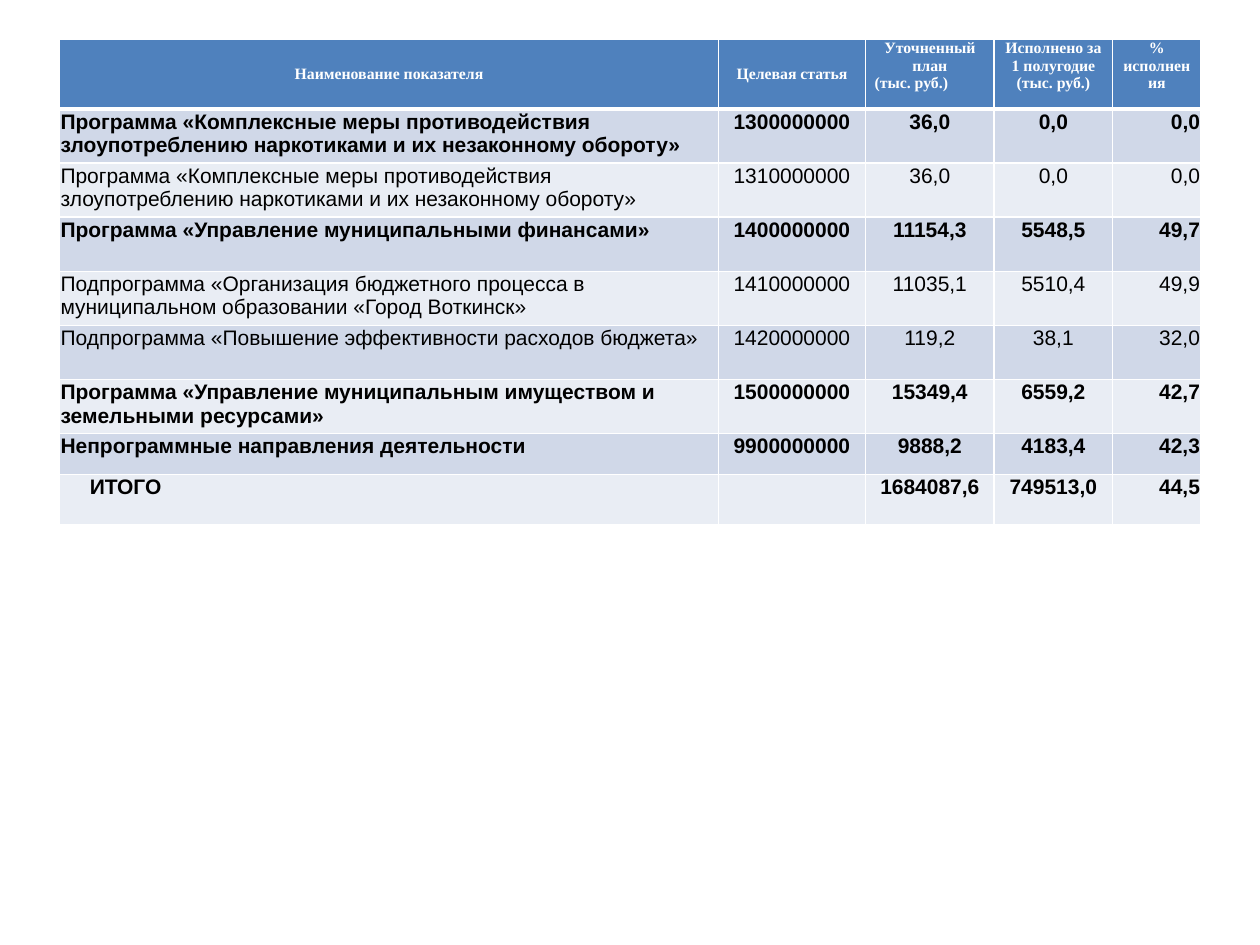
"""Builds a slide with a table of budget programme execution."""
import pptx
import pptx.dml.color
import pptx.enum.text
import pptx.oxml
import pptx.oxml.ns
import pptx.util
from pptx.util import Cm

ALIGN = pptx.enum.text.PP_ALIGN
ANCHOR = pptx.enum.text.MSO_ANCHOR

COLUMN_WIDTHS = [13.28, 2.97, 2.59, 2.39, 1.78]
ROW_HEIGHTS = [1.4] + [1.09] * 6 + [0.83, 1.0]
COLUMN_ALIGNS = [ALIGN.LEFT, ALIGN.CENTER, ALIGN.CENTER, ALIGN.CENTER, ALIGN.RIGHT]
HEADERS = [
    ["Наименование показателя"],
    ["Целевая статья"],
    ["Уточненный план", "(тыс. руб.)"],
    ["Исполнено за 1 полугодие", "(тыс. руб.)"],
    ["% исполнения"],
]
DRUGS = "Программа «Комплексные меры противодействия злоупотреблению наркотиками и их незаконному обороту»"
PROGRAMMES = [
    (True, DRUGS, "1300000000", "36,0", "0,0", "0,0"),
    (False, DRUGS, "1310000000", "36,0", "0,0", "0,0"),
    (True, "Программа «Управление муниципальными финансами»",
     "1400000000", "11154,3", "5548,5", "49,7"),
    (False, "Подпрограмма «Организация бюджетного процесса в муниципальном образовании «Город Воткинск»",
     "1410000000", "11035,1", "5510,4", "49,9"),
    (False, "Подпрограмма «Повышение эффективности расходов бюджета»",
     "1420000000", "119,2", "38,1", "32,0"),
    (True, "Программа «Управление муниципальным имуществом и земельными ресурсами»",
     "1500000000", "15349,4", "6559,2", "42,7"),
    (True, "Непрограммные направления деятельности",
     "9900000000", "9888,2", "4183,4", "42,3"),
    (True, "ИТОГО", "", "1684087,6", "749513,0", "44,5"),
]


def color(value):
    return pptx.dml.color.RGBColor.from_string(value)


class SlideBuilder:
    header_fill = "4F81BD"
    band_fills = ["D0D8E8", "E9EDF4"]
    white = "FFFFFF"
    black = "000000"

    def __init__(self, slide):
        self.slide = slide

    def table(self, left, top, widths, heights):
        frame = self.slide.shapes.add_table(
            len(heights), len(widths), Cm(left), Cm(top), Cm(sum(widths)), Cm(sum(heights)))
        table = frame.table
        table.first_row = table.horz_banding = False
        for column, width in zip(table.columns, widths):
            column.width = Cm(width)
        for row, height in zip(table.rows, heights):
            row.height = Cm(height)
        return table

    def cell(self, cell, fill, margins, top_line=1, bottom_line=1):
        cell.margin_left, cell.margin_top, cell.margin_right, cell.margin_bottom = map(Cm, margins)
        cell.fill.solid()
        cell.fill.fore_color.rgb = color(fill)
        self.borders(cell, {"lnL": 1, "lnR": 1, "lnT": top_line, "lnB": bottom_line})

    def borders(self, cell, lines):
        properties = cell._tc.get_or_add_tcPr()
        for index, (tag, width) in enumerate(lines.items()):
            properties.insert(index, pptx.oxml.parse_xml(
                f'<a:{tag} {pptx.oxml.ns.nsdecls("a")} w="{pptx.util.Pt(width)}">'
                f'<a:solidFill><a:srgbClr val="{self.white}"/></a:solidFill></a:{tag}>'))

    def text(self, para, text, font, size, ink, bold, align):
        para.alignment = align
        if not text:
            para.font.size = pptx.util.Pt(size)
            return
        span = para.add_run()
        span.text = text
        span.font.name = font
        span.font.size = pptx.util.Pt(size)
        span.font.bold = bold
        span.font.color.rgb = color(ink)

    def header(self, cell, lines, anchor, aligns):
        self.cell(cell, self.header_fill, (0.18, 0, 0.18, 0), bottom_line=3)
        cell.vertical_anchor = anchor
        box = cell.text_frame
        for index, (line, align) in enumerate(zip(lines, aligns)):
            para = box.add_paragraph() if index else box.paragraphs[0]
            self.text(para, line, "Times New Roman", 9, self.white, True, align)

    def body(self, cell, text, row, bold, align, indent):
        self.cell(cell, self.band_fills[(row - 1) % 2], (indent, 0.02, 0.02, 0),
                  top_line=3 if row == 1 else 1)
        self.text(cell.text_frame.paragraphs[0], text, "Arial", 12, self.black, bold, align)


def main():
    deck = pptx.Presentation()
    deck.slide_width, deck.slide_height = Cm(25.4), Cm(19.05)
    builder = SlideBuilder(deck.slides.add_slide(deck.slide_layouts[6]))
    table = builder.table(1.2, 0.8, COLUMN_WIDTHS, ROW_HEIGHTS)
    for column, lines in enumerate(HEADERS):
        anchor = ANCHOR.MIDDLE if column < 2 else ANCHOR.TOP
        unit_align = ALIGN.LEFT if column == 2 else ALIGN.CENTER
        builder.header(table.cell(0, column), lines, anchor, [ALIGN.CENTER, unit_align])
    for row, (bold, *values) in enumerate(PROGRAMMES, start=1):
        for column, (value, align) in enumerate(zip(values, COLUMN_ALIGNS)):
            indent = 0.61 if value == "ИТОГО" else 0.02
            builder.body(table.cell(row, column), value, row, bold, align, indent)
    deck.save("out.pptx")


if __name__ == "__main__":
    main()
